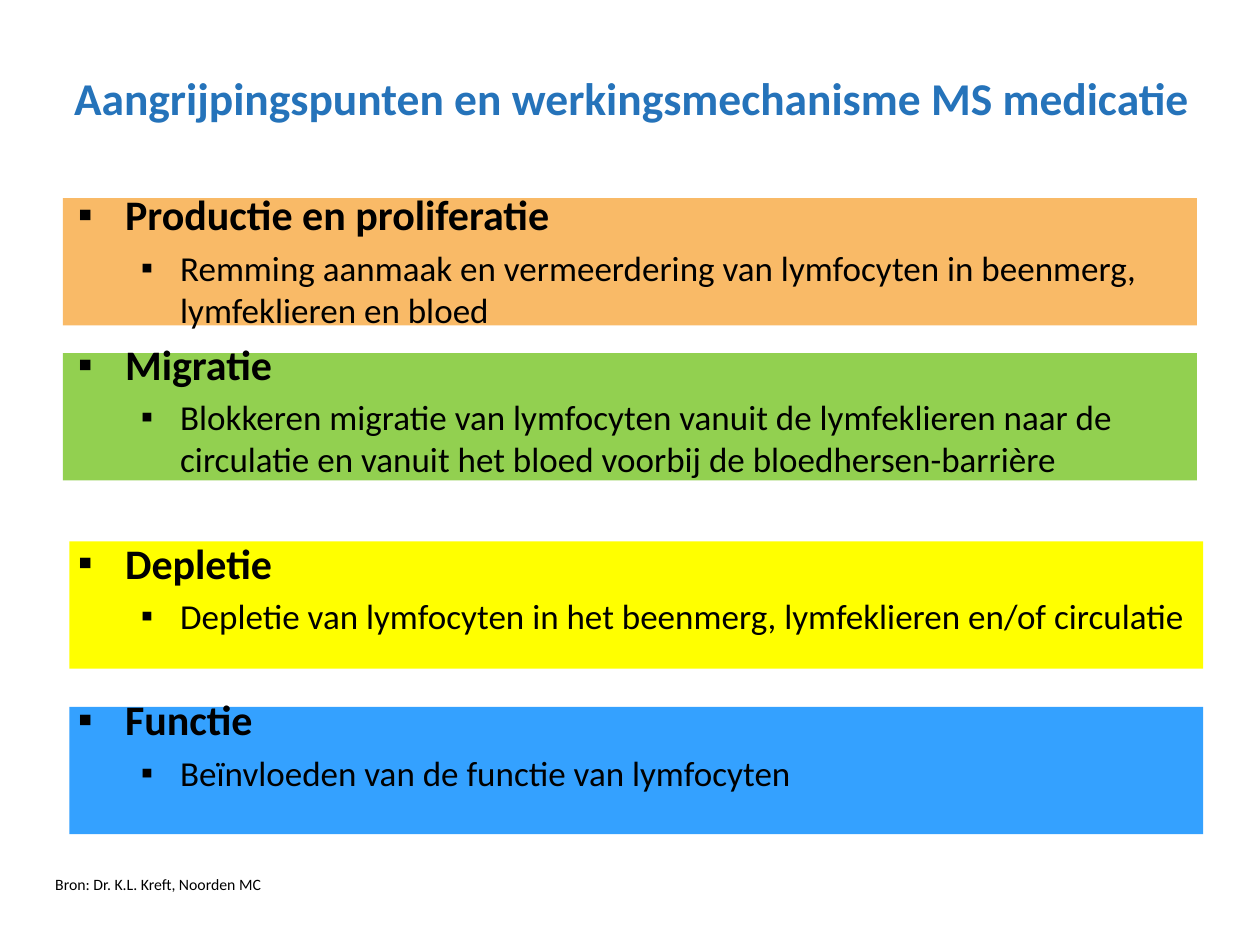
from lxml import etree
from pptx import Presentation, util as u
from pptx.dml.color import RGBColor
from pptx.enum import shapes, text
from pptx.oxml.ns import qn

Pt = u.Pt
THEME = {
    "font": "Calibri", "ink": "000000", "title": "2573BA",
    "title_size": 26, "head_size": 24, "sub_size": 20, "note_size": 9,
}
TITLE = "Aangrijpingspunten en werkingsmechanisme MS medicatie"
NOTE = "Bron: Dr. K.L. Kreft, Noorden MC"
BAR_W, BAR_H = 648, 72.7
SUB_GAP = 4
# heading, detail, bar colour, bar left, bar top, space above heading
TOPICS = [
    ("Productie en proliferatie",
     "Remming aanmaak en vermeerdering van lymfocyten in beenmerg, "
     "lymfeklieren en bloed", "F9BA67", 36, 113.2, 0),
    ("Migratie",
     "Blokkeren migratie van lymfocyten vanuit de lymfeklieren naar de "
     "circulatie en vanuit het bloed voorbij de bloedhersen-barrière",
     "92D050", 36, 201.8, 4.7),
    ("Depletie",
     "Depletie van lymfocyten in het beenmerg, lymfeklieren en/of circulatie",
     "FFFF00", 39.6, 309.4, 32.7),
    ("Functie", "Beïnvloeden van de functie van lymfocyten",
     "34A1FF", 39.6, 404, 32.7),
]


def add_bar(slide, left, top, color):
    bar = slide.shapes.add_shape(
        shapes.MSO_SHAPE.RECTANGLE, Pt(left), Pt(top), Pt(BAR_W), Pt(BAR_H))
    bar.shadow.inherit = False
    bar.fill.solid()
    bar.fill.fore_color.rgb = RGBColor.from_string(color)
    bar.line.fill.background()


def add_box(slide, left, top, width, height):
    frame = slide.shapes.add_textbox(
        Pt(left), Pt(top), Pt(width), Pt(height)).text_frame
    frame.word_wrap = True
    return frame


def add_text(frame, words, size, color=THEME["ink"], bold=False,
             align=text.PP_ALIGN.LEFT, level=0, before=0, indent=None):
    """Write a paragraph; indent is (margin, hang) and turns the bullet on."""
    para = frame.paragraphs[0]
    if para.runs:
        para = frame.add_paragraph()
    para.alignment, para.level, para.space_before = align, level, Pt(before)
    run = para.add_run()
    run.text = words
    font = run.font
    font.name, font.size, font.bold = THEME["font"], Pt(size), bold
    font.color.rgb = RGBColor.from_string(color)
    if indent:
        props = para._p.get_or_add_pPr()
        margin, hang = indent
        props.set("marL", str(Pt(margin)))
        props.set("indent", str(-Pt(hang)))
        etree.SubElement(props, qn("a:buFont"), typeface="Arial")
        etree.SubElement(props, qn("a:buChar"), char="▪")


def main():
    deck = Presentation()
    deck.slide_width, deck.slide_height = Pt(720), Pt(540)
    slide = deck.slides.add_slide(deck.slide_layouts[6])

    for _, _, color, left, top, _ in TOPICS:
        add_bar(slide, left, top, color)

    body = add_box(slide, 37.4, 104.4, 648, 391.7)
    for head, sub, _, _, _, gap in TOPICS:
        add_text(body, head, THEME["head_size"], bold=True, before=gap,
                 indent=(27, 27))
        add_text(body, sub, THEME["sub_size"], level=1, before=SUB_GAP,
                 indent=(58.5, 22.5))

    title = add_box(slide, 26.6, 31.7, 669.6, 48.2)
    title.vertical_anchor = text.MSO_ANCHOR.MIDDLE
    add_text(title, TITLE, THEME["title_size"], color=THEME["title"],
             bold=True, align=text.PP_ALIGN.CENTER)

    note = add_box(slide, 24.5, 496.1, 666.7, 18)
    add_text(note, NOTE, THEME["note_size"])
    deck.save("out.pptx")


if __name__ == "__main__":
    main()
